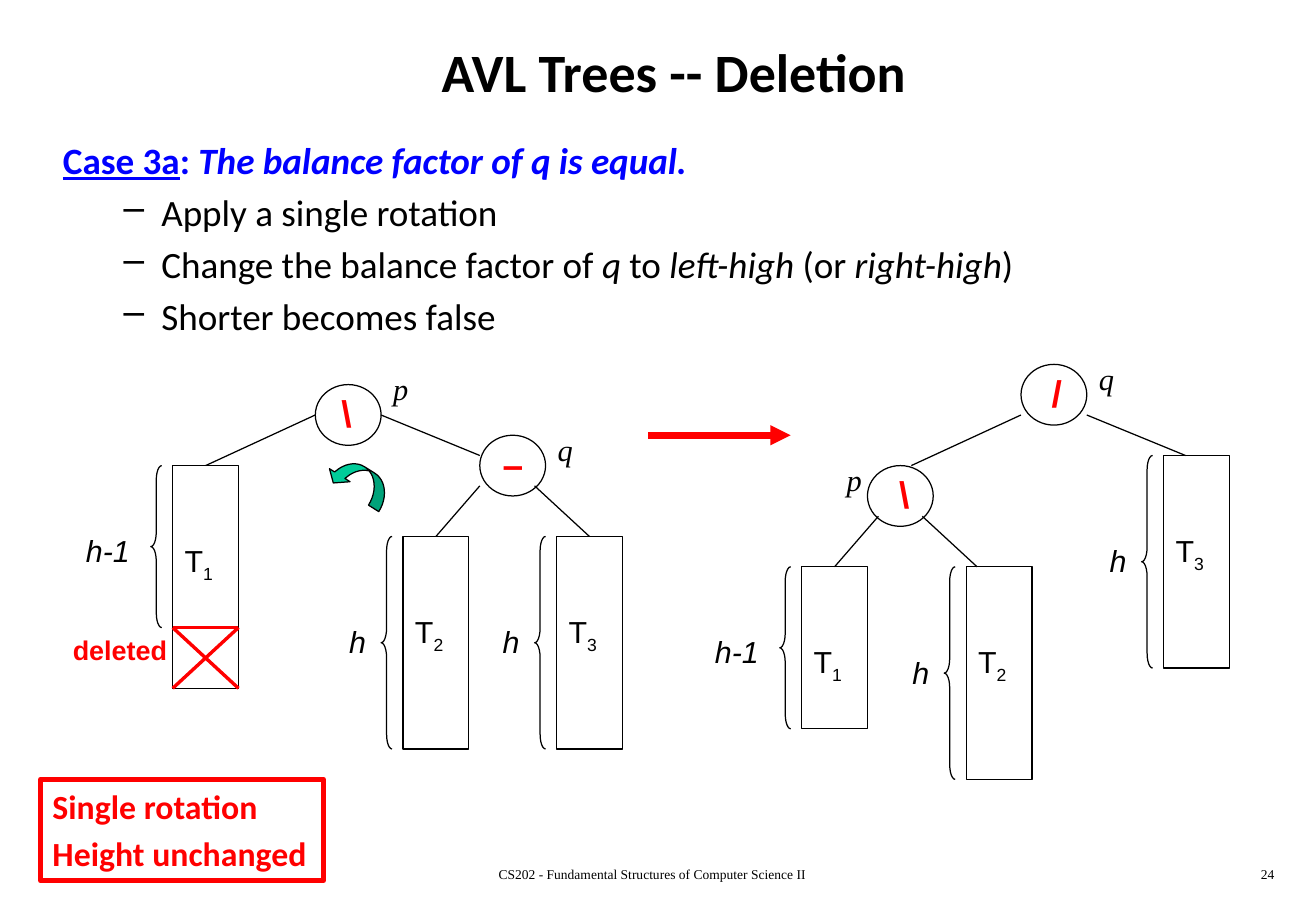
from lxml.etree import SubElement
from pptx import Presentation
from pptx.dml.color import RGBColor
from pptx.enum.shapes import MSO_CONNECTOR as Link, MSO_SHAPE as Shape
from pptx.enum.text import MSO_ANCHOR as Anchor, PP_ALIGN as Align
from pptx.oxml.ns import qn
from pptx.util import Inches, Pt

BLACK = RGBColor(0x00, 0x00, 0x00)
WHITE = RGBColor(0xFF, 0xFF, 0xFF)
RED = RGBColor(0xFF, 0x00, 0x00)
BLUE = RGBColor(0x00, 0x00, 0xFF)
GREEN = RGBColor(0x00, 0xCC, 0x99)
COLUMNS, ROWS = 120, 90


def add_run(paragraph, text, font="Arial", size=18, color=BLACK, bold=False,
            italic=False, underline=False, baseline=0):
    run = paragraph.add_run()
    run.text = text
    run.font.name, run.font.size = font, Pt(size)
    run.font.bold, run.font.italic, run.font.underline = bold, italic, underline
    run.font.color.rgb = color
    if baseline:
        run.font._element.set("baseline", str(baseline * 1000))


class TreeSlide:
    def __init__(self, presentation):
        self.slide = presentation.slides.add_slide(presentation.slide_layouts[6])
        self.shapes = self.slide.shapes
        self.column = presentation.slide_width / COLUMNS
        self.row = presentation.slide_height / ROWS
        self.origin = 0  # first column of the current tree

    def point(self, col, row):
        return round((self.origin + col) * self.column), round(row * self.row)

    def box(self, col, row, width, height):
        return *self.point(col, row), round(width * self.column), round(height * self.row)

    def fill_text(self, frame, paragraphs, align=Align.LEFT, anchor=Anchor.TOP, gap=0):
        """Each paragraph is a list of (text, format) runs."""
        frame.word_wrap, frame.vertical_anchor = True, anchor
        for index, runs in enumerate(paragraphs):
            paragraph = frame.add_paragraph() if index else frame.paragraphs[0]
            paragraph.alignment = align
            if index:
                paragraph.space_before = Pt(gap)
            for text, style in runs:
                add_run(paragraph, text, **style)
        return frame

    def text(self, col, row, width, height, paragraphs, **layout):
        area = self.shapes.add_textbox(*self.box(col, row, width, height))
        return self.fill_text(area.text_frame, paragraphs, **layout)

    def label(self, col, row, width, text, **style):
        return self.text(col, row, width, 5, [[(text, style)]])

    def outline(self, kind, col, row, width, height, fill=None, color=BLACK, weight=0.75):
        shape = self.shapes.add_shape(kind, *self.box(col, row, width, height))
        shape.shadow.inherit = False
        if fill is None:
            shape.fill.background()
        else:
            shape.fill.solid()
            shape.fill.fore_color.rgb = fill
        shape.line.color.rgb, shape.line.width = color, Pt(weight)
        return shape

    def line(self, start, end, color=BLACK, weight=0.75, arrow=False):
        """The end is either a grid point or a subtree, joined at its top."""
        to_point = isinstance(end, tuple)
        target = self.point(*end) if to_point else (end.left, end.top)
        link = self.shapes.add_connector(Link.STRAIGHT, *self.point(*start), *target)
        if not to_point:
            link.end_connect(end, 0)
        link.line.color.rgb, link.line.width = color, Pt(weight)
        if arrow:
            SubElement(link.line._get_or_add_ln(), qn("a:tailEnd"), type="triangle")
        SubElement(link._element.spPr, qn("a:effectLst"))

    def node(self, col, row, balance, shift, name, name_offset):
        self.outline(Shape.OVAL, col, row, 6, 6)
        self.label(col + shift, row, 5, balance, size=22, color=RED, bold=True)
        self.label(col + name_offset[0], row + name_offset[1], 7, name,
                   font="Times New Roman", italic=True)

    def subtree(self, col, row, number, height, depth, deleted=0):
        tree = self.outline(Shape.RECTANGLE, col, row, 6, depth + deleted)
        self.text(col, row + 7, 6, 5, [[("T", {}), (number, {"baseline": -25})]])
        brace = self.outline(Shape.LEFT_BRACE, col - 2, row, 1, depth)
        brace.adjustments[0] = 1.33
        offset, drop, width = (6, 8, 6) if height == "h" else (9, 6, 11)
        self.label(col - offset, row + drop, width, height, italic=True)
        return tree


def main():
    presentation = Presentation()
    presentation.slide_width, presentation.slide_height = Inches(10.83), Inches(7.5)
    page = TreeSlide(presentation)

    # Title
    page.text(4.65, 2, 113.6, 10,
              [[("AVL Trees -- Deletion", {"font": "Calibri", "size": 32, "bold": True})]],
              align=Align.CENTER, anchor=Anchor.MIDDLE)

    # Case and its steps
    plain = {"font": "Calibri", "size": 22}
    italic = {**plain, "italic": True}
    case = {**plain, "color": BLUE, "bold": True}
    steps = page.text(4.65, 13, 100.6, 21, [
        [("Case 3a", {**case, "underline": True}), (": ", case),
         ("The balance factor of q is equal.", {**case, "italic": True})],
        [("Apply a single rotation", plain)],
        [("Change the balance factor of ", plain), ("q ", italic), ("to ", plain),
         ("left-high", italic), (" (or ", plain), ("right-high", italic), (")", plain)],
        [("Shorter becomes false", plain)],
    ], gap=4.4)
    for step in steps.paragraphs[1:]:
        properties = step._element.get_or_add_pPr()
        properties.set("marL", str(Inches(0.81)))
        properties.set("indent", str(Inches(-0.31)))
        SubElement(properties, qn("a:buChar"), char="–")

    # Footer
    small = {"font": "Times New Roman", "size": 8}
    page.text(37, 85, 45, 3,
              [[("CS202 - Fundamental Structures of Computer Science II", small)]],
              align=Align.CENTER)
    page.text(92.3, 85, 25, 3, [[("24", small)]], align=Align.RIGHT)

    # Outcome
    outcome = page.outline(Shape.RECTANGLE, 3.7, 77, 25.8, 10, WHITE, RED, 3)
    strong = {"font": "Calibri", "size": 20, "color": RED, "bold": True}
    page.fill_text(outcome.text_frame,
                   [[("Single rotation", strong)], [("Height unchanged", strong)]], gap=4)

    # Tree before the rotation
    page.origin = 0.75
    page.node(28, 38, "\\", 1.3, "p", (6, -2))
    page.node(43, 43, "–", 1, "q", (6, -1))
    t1 = page.subtree(15, 46, "1", "h-1", 16, deleted=6)
    t2 = page.subtree(36, 53, "2", "h", 21)
    t3 = page.subtree(50, 53, "3", "h", 21)
    for start, end in [((28, 41), t1), ((34, 41), (43, 45)),
                       ((43, 48), t2), ((48, 48), t3)]:
        page.line(start, end)

    # Deleted part of T1
    for start, end in [((15, 62), (21, 62)), ((15, 62), (21, 68)), ((21, 62), (15, 68))]:
        page.line(start, end, RED, 2)
    page.label(4.8, 62, 14, "deleted", size=16, color=RED, bold=True)

    # Rotation direction
    turn = page.outline(Shape.CURVED_LEFT_ARROW, 30.6, 44.3, 2.77, 6.5, GREEN)
    turn.rotation = 302.2
    turn._element.spPr.xfrm.set("flipV", "1")
    for index, value in enumerate((0.4, 0.8, 0.33)):
        turn.adjustments[index] = value

    # Tree after the rotation
    page.origin = 0.1
    page.line((59, 43), (72, 43), RED, 4, arrow=True)
    page.node(93, 36, "/", 1.7, "q", (6, -1))
    page.node(79, 46, "\\", 1.8, "p", (-3, -1))
    t1 = page.subtree(73, 56, "1", "h-1", 16)
    page.subtree(88, 56, "2", "h", 21)
    page.subtree(106, 45, "3", "h", 21)
    for start, end in [((93, 41), (83, 46)), ((99, 41), (108, 45)),
                       ((80, 51), t1), ((84, 51), (89, 56))]:
        page.line(start, end)

    presentation.save("out.pptx")


if __name__ == "__main__":
    main()
